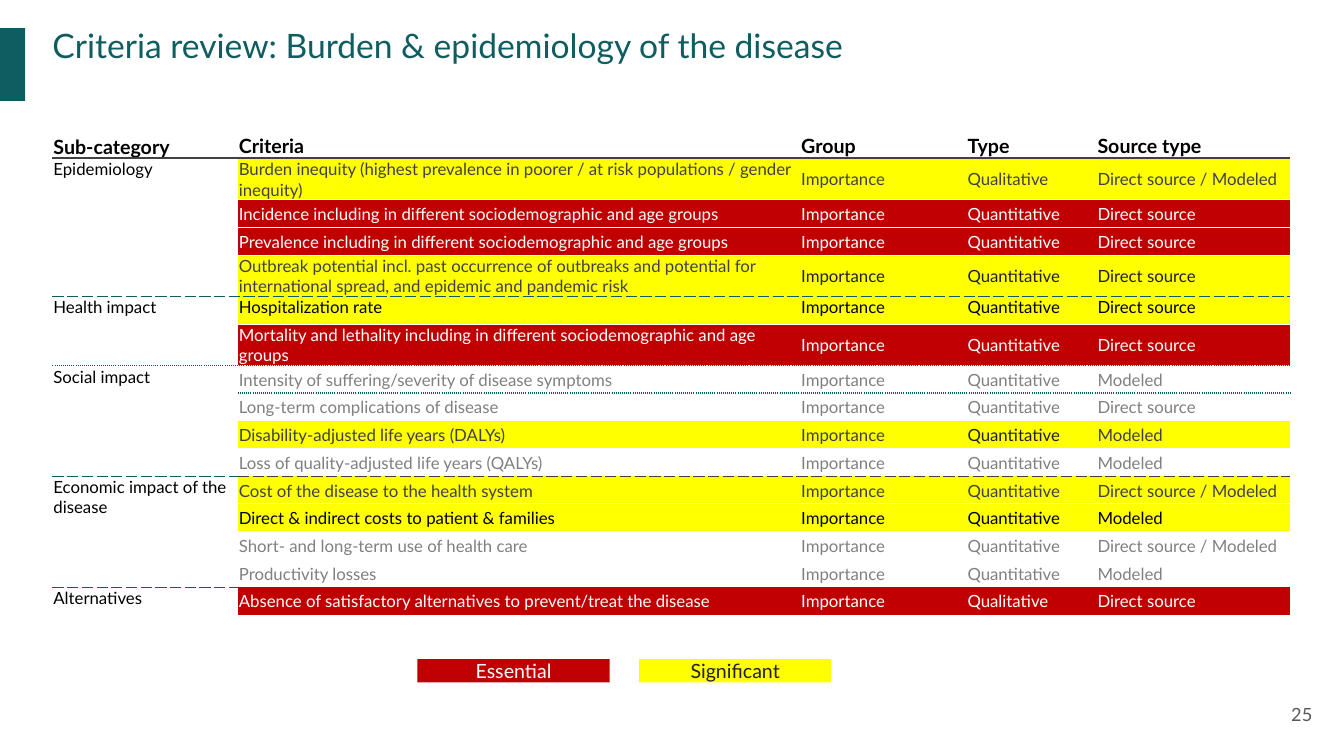
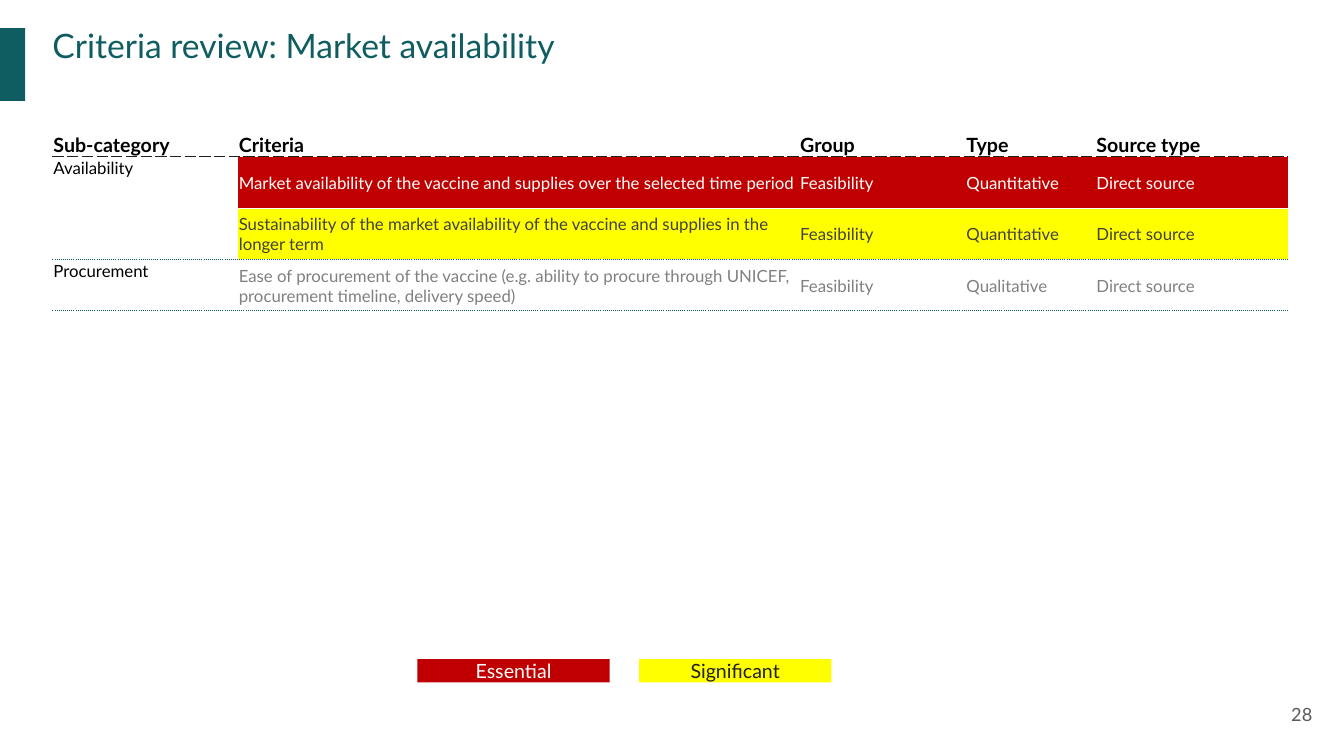
from dataclasses import dataclass, field

from lxml import etree
from pptx import Presentation
from pptx import util as u
from pptx.dml.color import RGBColor
from pptx.enum import shapes, text
from pptx.oxml import ns

# Shared look: 200 px to the inch
PX = 4572
FONT = "Lato"
NO_GRID_STYLE = "{2D5ABB26-0587-4C30-8999-92F81FD0307C}"
COLORS = {
    "teal": "0F5D61", "red": "C00000", "yellow": "FFFF00", "white": "FFFFFF",
    "black": "000000", "ink": "202020", "dark": "414141", "page": "595959",
    "gray": "808080",
}
LEVELS = {  # fill, text colour
    "essential": ("red", "white"),
    "significant": ("yellow", "dark"),
    "emphasis": ("yellow", "black"),
    "other": (None, "gray"),
}
RULES = {  # colour, width in points, dash
    "head": ("dark", 1.5, "solid"),
    "thin": ("white", 0.75, "solid"),
    "dash": ("teal", 0.5, "sysDash"),
    "dark dash": ("dark", 0.5, "sysDash"),
    "ink dash": ("ink", 0.5, "sysDash"),
    "dot": ("teal", 1, "sysDot"),
}
HEADINGS = ("Sub-category", "Criteria", "Group", "Type", "Source type")
LEGEND = (("Essential", "red", "white"), ("Significant", "yellow", "ink"))
TOP, MIDDLE, BOTTOM = (text.MSO_ANCHOR.TOP, text.MSO_ANCHOR.MIDDLE,
                       text.MSO_ANCHOR.BOTTOM)
LEFT, CENTER, RIGHT = (text.PP_ALIGN.LEFT, text.PP_ALIGN.CENTER,
                       text.PP_ALIGN.RIGHT)


@dataclass
class Row:
    level: str
    criterion: str
    kind: str
    source: str
    rule: str = None  # line below the row
    height: int = 55
    inks: dict = field(default_factory=dict)  # text colours by column
    anchor: int = MIDDLE


@dataclass
class Category:
    name: str
    rule: str  # line below the category
    rows: list


# Content
QUANT, QUAL = "Quantitative", "Qualitative"
DIRECT, MODELED, BOTH = "Direct source", "Modeled", "Direct source / Modeled"
TALL, ROOMY = 82, 102

BURDEN = [
    Category("Epidemiology", "dash", [
        Row("significant", "Burden inequity (highest prevalence in poorer / at "
            "risk populations / gender inequity)", QUAL, BOTH, "thin", TALL),
        Row("essential", "Incidence including in different sociodemographic "
            "and age groups", QUANT, DIRECT, "thin"),
        Row("essential", "Prevalence including in different sociodemographic "
            "and age groups", QUANT, DIRECT, "thin"),
        Row("significant", "Outbreak potential incl. past occurrence of "
            "outbreaks and potential for international spread, and epidemic "
            "and pandemic risk", QUANT, DIRECT, "dash", TALL,
            {2: "ink", 3: "ink", 4: "ink"}),
    ]),
    Category("Health impact", "dot", [
        Row("emphasis", "Hospitalization rate", QUANT, DIRECT, "thin",
            anchor=TOP),
        Row("essential", "Mortality and lethality including in different "
            "sociodemographic and age groups", QUANT, DIRECT, "dot", TALL),
    ]),
    Category("Social impact", "dash", [
        Row("other", "Intensity of suffering/severity of disease symptoms",
            QUANT, MODELED),
        Row("other", "Long-term complications of disease", QUANT, DIRECT),
        Row("significant", "Disability-adjusted life years (DALYs)", QUANT,
            MODELED, inks={3: "ink"}),
        Row("other", "Loss of quality-adjusted life years (QALYs)", QUANT,
            MODELED, "dark dash"),
    ]),
    Category("Economic impact of the disease", "dash", [
        Row("significant", "Cost of the disease to the health system", QUANT,
            BOTH, "thin"),
        Row("emphasis", "Direct & indirect costs to patient & families",
            QUANT, MODELED),
        Row("other", "Short- and long-term use of health care", QUANT, BOTH),
        Row("other", "Productivity losses", QUANT, MODELED),
    ]),
    Category("Alternatives", None, [
        Row("essential", "Absence of satisfactory alternatives to "
            "prevent/treat the disease", QUAL, DIRECT),
    ]),
]
MARKET = [
    Category("Availability", "dot", [
        Row("essential", "Market availability of the vaccine and supplies "
            "over the selected time period", QUANT, DIRECT, "thin", ROOMY),
        Row("significant", "Sustainability of the market availability of the "
            "vaccine and supplies in the longer term", QUANT, DIRECT, "dot",
            ROOMY),
    ]),
    Category("Procurement", "dot", [
        Row("other", "Ease of procurement of the vaccine (e.g. ability to "
            "procure through UNICEF, procurement timeline, delivery speed)",
            QUAL, DIRECT, "dot", ROOMY),
    ]),
]


def px(n):
    return u.Emu(n * PX)


def rgb(name):
    return RGBColor.from_string(COLORS[name])


def put_text(tf, words, size, color, bold=False, align=LEFT):
    p = tf.paragraphs[0]
    p.alignment = align
    r = p.add_run()
    r.text = words
    fmt = {"name": FONT, "size": u.Pt(size), "bold": bold}
    for key, value in fmt.items():
        setattr(r.font, key, value)
    r.font.color.rgb = rgb(color)


def set_frame(tf, margin=0, anchor=TOP):
    fmt = {"word_wrap": True, "vertical_anchor": anchor}
    fmt.update({f"margin_{side}": px(margin)
                for side in ("left", "top", "right", "bottom")})
    for key, value in fmt.items():
        setattr(tf, key, value)


def add_label(s, box, words, size, color, margin=0, anchor=TOP, align=LEFT):
    sp = s.shapes.add_textbox(*map(px, box))
    set_frame(sp.text_frame, margin, anchor)
    put_text(sp.text_frame, words, size, color, align=align)


def add_block(s, box, fill):
    sp = s.shapes.add_shape(shapes.MSO_SHAPE.RECTANGLE, *map(px, box))
    sp.shadow.inherit = False
    sp.fill.solid()
    sp.fill.fore_color.rgb = rgb(fill)
    sp.line.fill.background()
    return sp


# Table cells
def add_rule(cell, side, rule):
    if rule is None:
        return
    color, width, dash = RULES[rule]
    ln = etree.SubElement(cell._tc.get_or_add_tcPr(), ns.qn(f"a:ln{side}"),
                          w=str(int(u.Pt(width))))
    fill = etree.SubElement(ln, ns.qn("a:solidFill"))
    etree.SubElement(fill, ns.qn("a:srgbClr"), val=COLORS[color])
    etree.SubElement(ln, ns.qn("a:prstDash"), val=dash)


def set_cell(cell, words, color, size=12, bold=False, anchor=MIDDLE,
             above=None, below=None, fill=None):
    fmt = {"margin_left": px(2), "margin_right": px(2), "margin_top": px(2),
           "margin_bottom": 0, "vertical_anchor": anchor}
    for key, value in fmt.items():
        setattr(cell, key, value)
    put_text(cell.text_frame, words, size, color, bold)
    add_rule(cell, "T", above)
    add_rule(cell, "B", below)
    if fill:
        cell.fill.solid()
        cell.fill.fore_color.rgb = rgb(fill)
    else:
        cell.fill.background()


def add_criteria_table(s, categories, group, widths, head_height, head_rule):
    rows = [row for cat in categories for row in cat.rows]
    heights = [head_height] + [row.height for row in rows]
    tbl = s.shapes.add_table(len(heights), len(widths), px(104), px(262),
                             px(sum(widths)), px(sum(heights))).table
    tbl.first_row = tbl.horz_banding = False
    tbl._tbl.tblPr[0].text = NO_GRID_STYLE
    for col, width in zip(tbl.columns, widths):
        col.width = px(width)
    for line, height in zip(tbl.rows, heights):
        line.height = px(height)

    # Heading row
    for c, words in enumerate(HEADINGS):
        set_cell(tbl.cell(0, c), words, "black", 14, True,
                 MIDDLE if c else BOTTOM, below=head_rule)

    # Criteria
    above = head_rule
    for i, row in enumerate(rows, 1):
        fill, ink = LEVELS[row.level]
        values = (row.criterion, group, row.kind, row.source)
        for c, words in enumerate(values, 1):
            set_cell(tbl.cell(i, c), words, row.inks.get(c, ink),
                     anchor=row.anchor, above=above, below=row.rule,
                     fill=fill)
        above = row.rule

    # Categories, each merged over its rows
    first, above = 1, head_rule
    for cat in categories:
        last = first + len(cat.rows) - 1
        cell = tbl.cell(first, 0)
        set_cell(cell, cat.name, "black", anchor=TOP, above=above,
                 below=cat.rule)
        if last > first:
            add_rule(tbl.cell(last, 0), "B", cat.rule)
            cell.merge(tbl.cell(last, 0))
        first, above = last + 1, cat.rule


def add_review_slide(prs, title, number):
    s = prs.slides.add_slide(prs.slide_layouts[6])
    add_block(s, (0, 56, 50, 144), "teal")
    add_label(s, (104, 50, 2510, 160), title, 24, "teal")
    add_label(s, (2470, 1360, 160, 114), number, 13, "page", 26, MIDDLE,
              RIGHT)
    return s


def add_legend(s):
    for i, (words, fill, ink) in enumerate(LEGEND):
        sp = add_block(s, (828 + 440 * i, 1308, 382, 46), fill)
        set_frame(sp.text_frame, anchor=MIDDLE)
        put_text(sp.text_frame, words, 14, ink, align=CENTER)


def main():
    prs = Presentation()
    prs.slide_width, prs.slide_height = px(2667), px(1500)
    reviews = (
        ("Criteria review: Burden & epidemiology of the disease", "25",
         (BURDEN, "Importance", (368, 1116, 330, 258, 384), 52, "head")),
        ("Criteria review: Market availability", "28",
         (MARKET, "Feasibility", (368, 1114, 330, 258, 382), 48, "ink dash")),
    )
    for title, number, table in reviews:
        s = add_review_slide(prs, title, number)
        add_criteria_table(s, *table)
        add_legend(s)
    prs.save("out.pptx")


if __name__ == "__main__":
    main()
